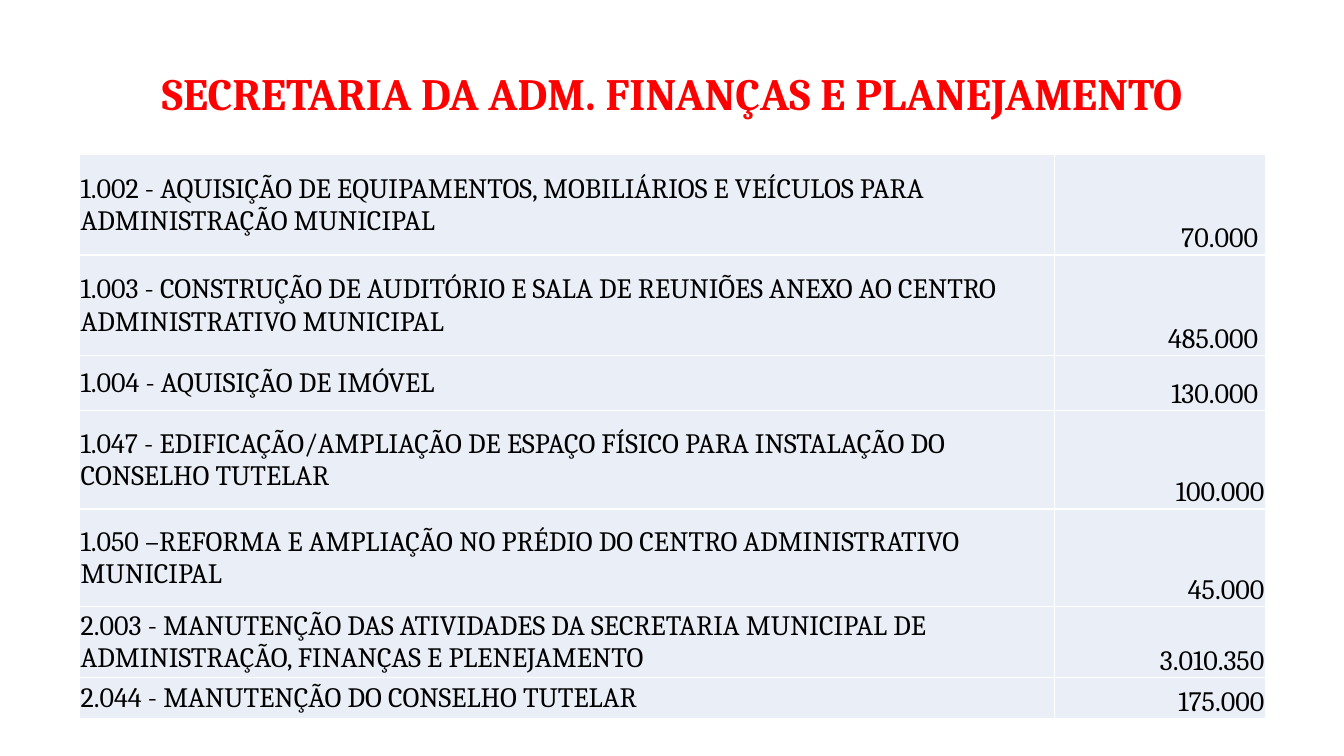
"""Build a budget slide: a red title above a table of actions and amounts."""
from lxml.etree import SubElement
from pptx import Presentation
from pptx.dml.color import RGBColor
from pptx.enum.text import MSO_ANCHOR, PP_ALIGN
from pptx.oxml.ns import qn
from pptx.util import Inches, Pt

TITLE = "SECRETARIA DA ADM. FINANÇAS E PLANEJAMENTO"
BUDGET_ROWS = [
    ("1.002 - AQUISIÇÃO DE EQUIPAMENTOS, MOBILIÁRIOS E VEÍCULOS PARA ADMINISTRAÇÃO MUNICIPAL", "70.000 ", 1),
    ("1.003 - CONSTRUÇÃO DE AUDITÓRIO E SALA DE REUNIÕES ANEXO AO CENTRO ADMINISTRATIVO MUNICIPAL", "485.000 ", 1),
    ("1.004 - AQUISIÇÃO DE IMÓVEL", "130.000 ", 0.54),
    ("1.047 - EDIFICAÇÃO/AMPLIAÇÃO DE ESPAÇO FÍSICO PARA INSTALAÇÃO DO CONSELHO TUTELAR", "100.000", 0.98),
    ("1.050 –REFORMA E AMPLIAÇÃO NO PRÉDIO DO CENTRO ADMINISTRATIVO MUNICIPAL", "45.000", 0.97),
    ("2.003 - MANUTENÇÃO DAS ATIVIDADES DA SECRETARIA MUNICIPAL DE ADMINISTRAÇÃO, FINANÇAS E PLENEJAMENTO",
     "3.010.350", 0.7),
    ("2.044 - MANUTENÇÃO DO CONSELHO TUTELAR", "175.000", 0.41),
]
COLUMN_WIDTHS = (9.67, 2.09)
COLUMN_STYLES = ((MSO_ANCHOR.MIDDLE, PP_ALIGN.LEFT), (MSO_ANCHOR.BOTTOM, PP_ALIGN.RIGHT))
FONT = "Cambria"
RED, BLACK, WHITE, PALE_BLUE = "FF0000", "000000", "FFFFFF", "EAEFF7"


def color(value):
    return RGBColor.from_string(value)


def format_paragraph(paragraph, size, font_color, alignment, bold=False):
    paragraph.alignment = alignment
    for run in paragraph.runs:
        run.font.name = FONT
        run.font.size = Pt(size)
        run.font.bold = bold
        run.font.color.rgb = color(font_color)


def add_borders(cell, line_color):
    properties = cell._tc.get_or_add_tcPr()
    for position, side in enumerate(("a:lnL", "a:lnR", "a:lnT", "a:lnB")):
        line = properties.makeelement(qn(side), {"w": str(Pt(1))})
        fill = SubElement(line, qn("a:solidFill"))
        SubElement(fill, qn("a:srgbClr"), val=line_color)
        properties.insert(position, line)


def add_title(slide):
    box = slide.shapes.add_textbox(Inches(0.92), Inches(0.37), Inches(11.5), Inches(1.16))
    frame = box.text_frame
    frame.word_wrap = True
    frame.vertical_anchor = MSO_ANCHOR.MIDDLE
    frame.text = TITLE
    paragraph = frame.paragraphs[0]
    paragraph.line_spacing = 0.9
    format_paragraph(paragraph, 32, RED, PP_ALIGN.CENTER, bold=True)


def fill_cell(cell, text, anchor, alignment):
    cell.text = text
    cell.vertical_anchor = anchor
    cell.margin_left = cell.margin_right = cell.margin_top = Inches(0.01)
    cell.margin_bottom = 0
    cell.fill.solid()
    cell.fill.fore_color.rgb = color(PALE_BLUE)
    add_borders(cell, WHITE)
    format_paragraph(cell.text_frame.paragraphs[0], 20, BLACK, alignment)


def add_budget_table(slide):
    height = sum(row[-1] for row in BUDGET_ROWS)
    frame = slide.shapes.add_table(len(BUDGET_ROWS), len(COLUMN_WIDTHS), Inches(0.79), Inches(1.53),
                                   Inches(sum(COLUMN_WIDTHS)), Inches(height))
    table = frame.table
    table.first_row = False
    table.horz_banding = False
    for column, width in zip(table.columns, COLUMN_WIDTHS):
        column.width = Inches(width)
    for row, (action, amount, row_height) in zip(table.rows, BUDGET_ROWS):
        row.height = Inches(row_height)
        for cell, text, (anchor, alignment) in zip(row.cells, (action, amount), COLUMN_STYLES):
            fill_cell(cell, text, anchor, alignment)


def main():
    presentation = Presentation()
    presentation.slide_width = Inches(13.33)
    presentation.slide_height = Inches(7.5)
    slide = presentation.slides.add_slide(presentation.slide_layouts[6])
    add_title(slide)
    add_budget_table(slide)
    presentation.save("out.pptx")


if __name__ == "__main__":
    main()
